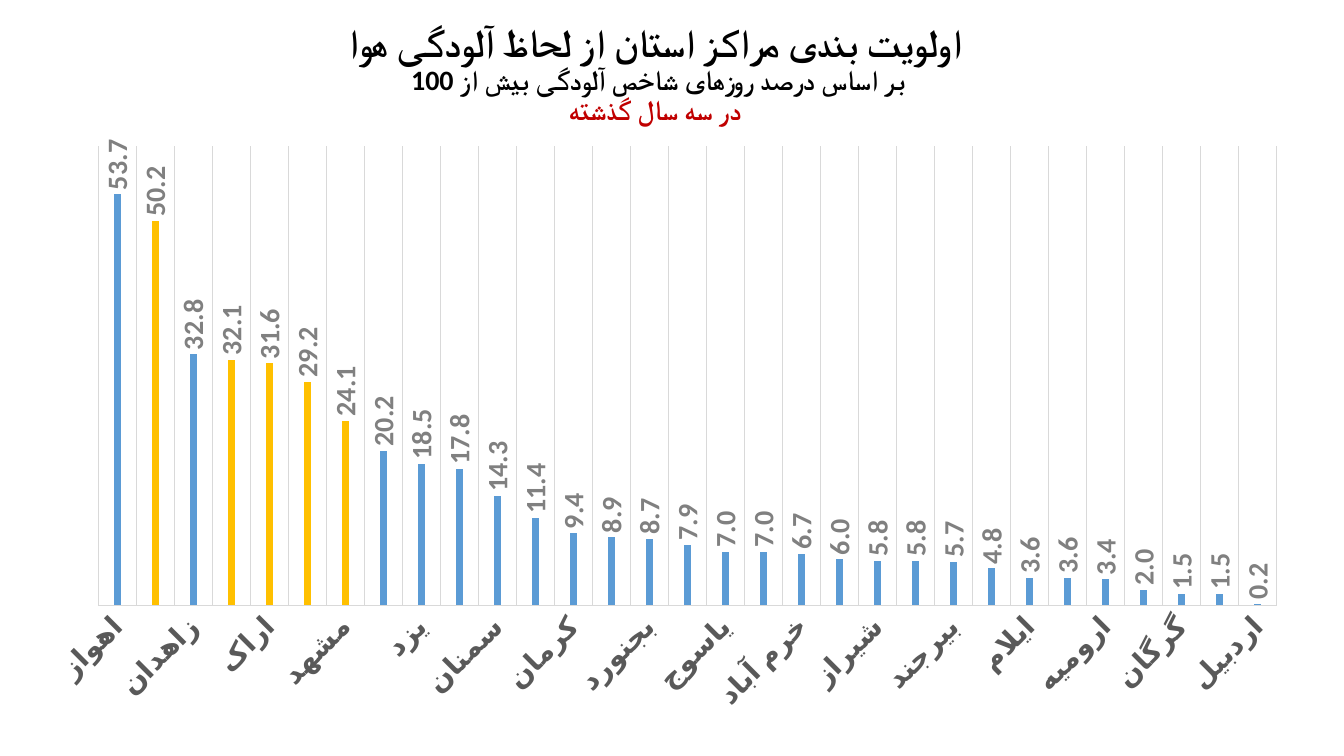
from lxml.etree import SubElement
from pptx import Presentation
from pptx.chart.data import CategoryChartData
from pptx.dml.color import RGBColor
from pptx.enum.chart import XL_CHART_TYPE, XL_LABEL_POSITION, XL_TICK_MARK
from pptx.enum.text import MSO_ANCHOR, PP_ALIGN
from pptx.oxml.ns import qn
from pptx.util import Cm, Pt

COLORS = {
    "black": "000000",
    "red": "C00000",
    "blue": "5B9BD5",
    "gold": "FFC000",
    "label": "808080",
    "city": "595959",
    "grid": "D9D9D9",
}

HEADING = [
    ("اولویت بندی مراکز استان از لحاظ آلودگی هوا", 28, "black"),
    ("بر اساس درصد روزهای شاخص آلودگی بیش از 100 ", 20, "black"),
    ("در سه سال گذشته", 20, "red"),
]

POLLUTED_DAYS = {
    "اهواز": 53.7, "اصفهان": 50.2, "زاهدان": 32.8, "تهران": 32.1,
    "اراک": 31.6, "کرج": 29.2, "مشهد": 24.1, "قزوین": 20.2,
    "یزد": 18.5, "قُم": 17.8, "سمنان": 14.3, "بوشهر": 11.4,
    "کرمان": 9.4, "سنندج": 8.9, "بجنورد": 8.7, "زنجان": 7.9,
    "یاسوج": 7.0, "همدان": 7.0, "خرم آباد": 6.7, "تبریز": 6.0,
    "شیراز": 5.8, "کرمانشاه": 5.8, "بیرجند": 5.7, "بندر عباس": 4.8,
    "ایلام": 3.6, "شهرکرد": 3.6, "ارومیه": 3.4, "رشت": 2.0,
    "گرگان": 1.5, "ساری": 1.5, "اردبیل": 0.2,
}
HIGHLIGHTED = ["اصفهان", "تهران", "اراک", "کرج", "مشهد"]


def rgb(color):
    return RGBColor.from_string(COLORS[color])


def format_text(font, size=20, color="black", bold=True, name="Calibri"):
    font.size = Pt(size)
    font.bold = bold
    font.name = name
    font.color.rgb = rgb(color)
    SubElement(font._rPr, qn("a:cs")).set("typeface", name)


def rotate_text(part, degrees):
    body = part._element.find(qn("c:txPr")).find(qn("a:bodyPr"))
    body.set("rot", str(degrees * 60000))
    body.set("vert", "horz")


def place_plot(chart, **fractions):
    plot_area = chart._chartSpace.chart.plotArea
    for automatic in plot_area.findall(qn("c:layout")):
        plot_area.remove(automatic)
    layout = SubElement(plot_area, qn("c:layout"))
    plot_area.insert(0, layout)
    manual = SubElement(layout, qn("c:manualLayout"))
    settings = {"layoutTarget": "inner", "xMode": "edge", "yMode": "edge", **fractions}
    for tag, value in settings.items():
        SubElement(manual, qn(f"c:{tag}")).set("val", str(value))


class PollutionSlide:
    def __init__(self, presentation):
        self.slide = presentation.slides.add_slide(presentation.slide_layouts[6])

    def heading(self, lines, left, top, width, height):
        box = self.slide.shapes.add_textbox(Cm(left), Cm(top), Cm(width), Cm(height))
        frame = box.text_frame
        frame.word_wrap = True
        frame.vertical_anchor = MSO_ANCHOR.MIDDLE
        paragraph = frame.paragraphs[0]
        paragraph.alignment = PP_ALIGN.CENTER
        paragraph.line_spacing = 0.9
        paragraph._p.get_or_add_pPr().set("rtl", "1")
        for number, (text, size, color) in enumerate(lines):
            if number:
                paragraph.add_line_break()
            run = paragraph.add_run()
            run.text = text
            format_text(run.font, size=size, color=color)

    def ranking(self, values, highlighted, left, top, width, height):
        data = CategoryChartData(number_format="0.0")
        data.categories = list(values)
        data.add_series("Series 1", list(values.values()))
        chart = self.slide.shapes.add_chart(
            XL_CHART_TYPE.COLUMN_CLUSTERED,
            Cm(left), Cm(top), Cm(width), Cm(height), data,
        ).chart
        chart.has_legend = False
        chart.has_title = False
        format_text(chart.font)
        place_plot(chart, x=0.057, y=0.02, w=0.923, h=0.772)
        self.bars(chart.plots[0], list(values), highlighted)
        self.axes(chart)

    def bars(self, plot, cities, highlighted):
        plot.gap_width = 444
        plot.overlap = -90
        plot.vary_by_categories = False
        days = plot.series[0]
        days.format.fill.solid()
        days.format.fill.fore_color.rgb = rgb("blue")
        for city in highlighted:
            fill = days.points[cities.index(city)].format.fill
            fill.solid()
            fill.fore_color.rgb = rgb("gold")
        percents = days.data_labels
        percents.show_value = True
        percents.position = XL_LABEL_POSITION.OUTSIDE_END
        percents.number_format = "0.0"
        percents.number_format_is_linked = False
        format_text(percents.font, color="label")
        rotate_text(percents, -90)

    def axes(self, chart):
        cities = chart.category_axis
        cities.major_tick_mark = XL_TICK_MARK.NONE
        cities.has_major_gridlines = True
        for line in (cities.format.line, cities.major_gridlines.format.line):
            line.color.rgb = rgb("grid")
            line.width = Pt(0.75)
        format_text(cities.tick_labels.font, color="city")
        rotate_text(cities, -45)
        percents = chart.value_axis
        percents.minimum_scale = 0
        percents.maximum_scale = 60
        percents.has_major_gridlines = False
        percents.visible = False


def main():
    presentation = Presentation()
    presentation.slide_width = Cm(33.87)
    presentation.slide_height = Cm(19.05)
    page = PollutionSlide(presentation)
    page.ranking(POLLUTED_DAYS, HIGHLIGHTED, 0.64, 3.38, 32.18, 14.99)
    page.heading(HEADING, 5.08, 0.69, 22.86, 2.41)
    presentation.save("out.pptx")


if __name__ == "__main__":
    main()
